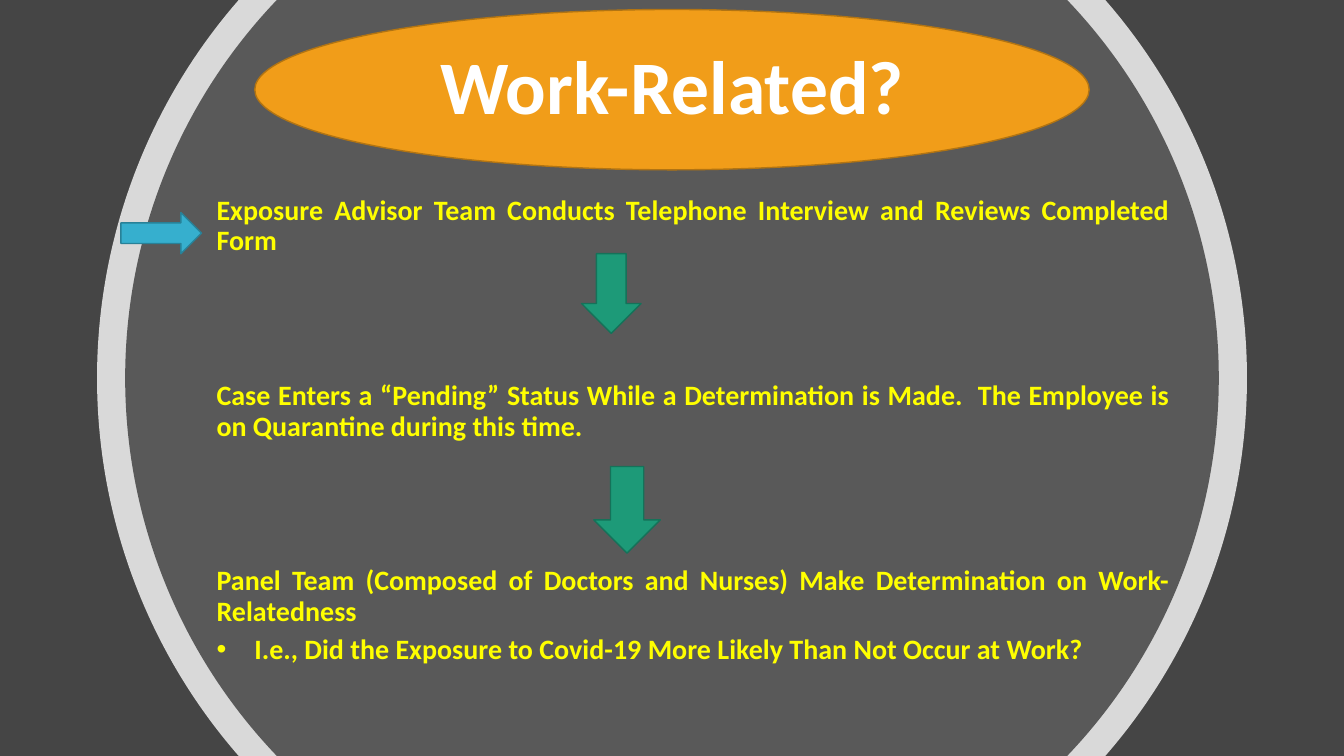
import math

import pptx
import pptx.dml.color
import pptx.enum.shapes
import pptx.enum.text
import pptx.oxml
import pptx.oxml.ns
import pptx.util

Pt = pptx.util.Pt
SHAPE = pptx.enum.shapes.MSO_SHAPE
ALIGN = pptx.enum.text.PP_ALIGN
NS = pptx.oxml.ns.nsdecls("a")
qn = pptx.oxml.ns.qn
WIDTH, HEIGHT = 960, 540
FONT = "Calibri"
COLORS = {
    "background": "454545", "ring": "FFFFFF", "disc": "595959",
    "title": "F19D19", "title_line": "B27412", "title_text": "FFFFFF",
    "text": "FFFF00",
    "entry": "36AFCE", "entry_line": "288198",
    "step": "1D9A78", "step_line": "157259",
}
STEP_GAP = 89
# text, space after, bulleted
STEPS = [
    ("Exposure Advisor Team Conducts Telephone Interview and Reviews "
     "Completed Form", STEP_GAP, False),
    ("Case Enters a “Pending” Status While a Determination is Made.  "
     "The Employee is on Quarantine during this time.", STEP_GAP, False),
    ("Panel Team (Composed of Doctors and Nurses) Make Determination on "
     "Work-Relatedness", 6, False),
    ("I.e., Did the Exposure to Covid-19 More Likely Than Not Occur at Work?",
     6, True),
]


def rgb(name):
    return pptx.dml.color.RGBColor.from_string(COLORS[name])


def paint(sp, fill, line=None):
    sp.shadow.inherit = False
    sp.fill.solid()
    sp.fill.fore_color.rgb = rgb(fill)
    if line:
        sp.line.color.rgb = rgb(line)
        sp.line.width = Pt(1)
    else:
        sp.line.fill.background()


def format_paragraph(p, size, color, align, space_after):
    p.alignment = align
    p.line_spacing = 0.9
    p.space_before = Pt(0)
    p.space_after = Pt(space_after)
    for r in p.runs:
        r.font.name = FONT
        r.font.size = Pt(size)
        r.font.bold = True
        r.font.color.rgb = rgb(color)


def add_disc(slide, radius, fill, alpha=None):
    """Draw a centred circle cut off at the top and bottom of the slide."""
    limit = math.asin(HEIGHT / 2 / radius)
    angles = [-limit, 0, limit, math.pi - limit, math.pi, math.pi + limit]
    handle = 4 / 3 * math.tan(limit / 4)

    def point(angle, bend=0):
        """Point of the circle, moved along its tangent by bend radii."""
        x = math.cos(angle) - bend * math.sin(angle)
        y = math.sin(angle) + bend * math.cos(angle)
        return Pt(WIDTH / 2 + radius * x), Pt(HEIGHT / 2 + radius * y)

    builder = slide.shapes.build_freeform(*point(angles[0]))
    builder.add_line_segments([point(a) for a in angles[1:]], close=True)
    sp = builder.convert_to_shape()
    lines = list(sp.element.iter(qn("a:lnTo")))
    for i in (1, 2, 4, 5):
        start, end = angles[i - 1], angles[i]
        corners = (point(start, handle), point(end, -handle), point(end))
        pts = "".join(f'<a:pt x="{x - sp.left}" y="{y - sp.top}"/>'
                      for x, y in corners)
        curve = pptx.oxml.parse_xml(
            f"<a:cubicBezTo {NS}>{pts}</a:cubicBezTo>")
        line = lines[i - 1]
        line.getparent().replace(line, curve)
    paint(sp, fill)
    if alpha:
        color = sp.element.spPr.find(".//" + qn("a:srgbClr"))
        color.append(pptx.oxml.parse_xml(
            f'<a:alpha {NS} val="{alpha * 1000}"/>'))


def add_preset(slide, kind, box, color):
    sp = slide.shapes.add_shape(kind, *(Pt(v) for v in box))
    paint(sp, color, color + "_line")


def add_title(slide, box):
    add_preset(slide, SHAPE.OVAL, box, "title")
    title = slide.shapes.title
    title.left, title.top, title.width, title.height = (Pt(v) for v in box)
    tf = title.text_frame
    tf.text = "Work-Related?"
    tf.word_wrap = True
    tf.auto_size = pptx.enum.text.MSO_AUTO_SIZE.NONE
    tf.vertical_anchor = pptx.enum.text.MSO_ANCHOR.MIDDLE
    format_paragraph(tf.paragraphs[0], 54, "title_text", ALIGN.CENTER, 6)
    slide.shapes.element.append(title.element)


def add_steps(slide, box):
    tf = slide.shapes.add_textbox(*(Pt(v) for v in box)).text_frame
    tf.word_wrap = True
    for i, (text, gap, bulleted) in enumerate(STEPS):
        p = tf.add_paragraph() if i else tf.paragraphs[0]
        p.text = text
        format_paragraph(p, 20, "text", ALIGN.JUSTIFY, gap)
        if bulleted:
            pPr = p._p.get_or_add_pPr()
            pPr.set("marL", str(Pt(27)))
            pPr.set("indent", str(Pt(-27)))
            pPr.append(pptx.oxml.parse_xml(
                f'<a:buFont {NS} typeface="Arial"/>'))
            pPr.append(pptx.oxml.parse_xml(f'<a:buChar {NS} char="•"/>'))


def build_slide(prs):
    slide = prs.slides.add_slide(prs.slide_layouts[5])
    slide.background.fill.solid()
    slide.background.fill.fore_color.rgb = rgb("background")
    add_disc(slide, 410.7, "ring", alpha=80)
    add_disc(slide, 390.6, "disc")
    add_title(slide, (182, 6.8, 596, 114.5))
    add_steps(slide, (147.6, 136.8, 694.8, 382.3))
    add_preset(slide, SHAPE.RIGHT_ARROW, (86.4, 151.8, 57.6, 29.5), "entry")
    add_preset(slide, SHAPE.DOWN_ARROW, (415.4, 181.2, 42.5, 56.9), "step")
    add_preset(slide, SHAPE.DOWN_ARROW, (424.2, 333.2, 47.5, 61.9), "step")


def main():
    prs = pptx.Presentation()
    prs.slide_width, prs.slide_height = Pt(WIDTH), Pt(HEIGHT)
    build_slide(prs)
    prs.save("out.pptx")


if __name__ == "__main__":
    main()
